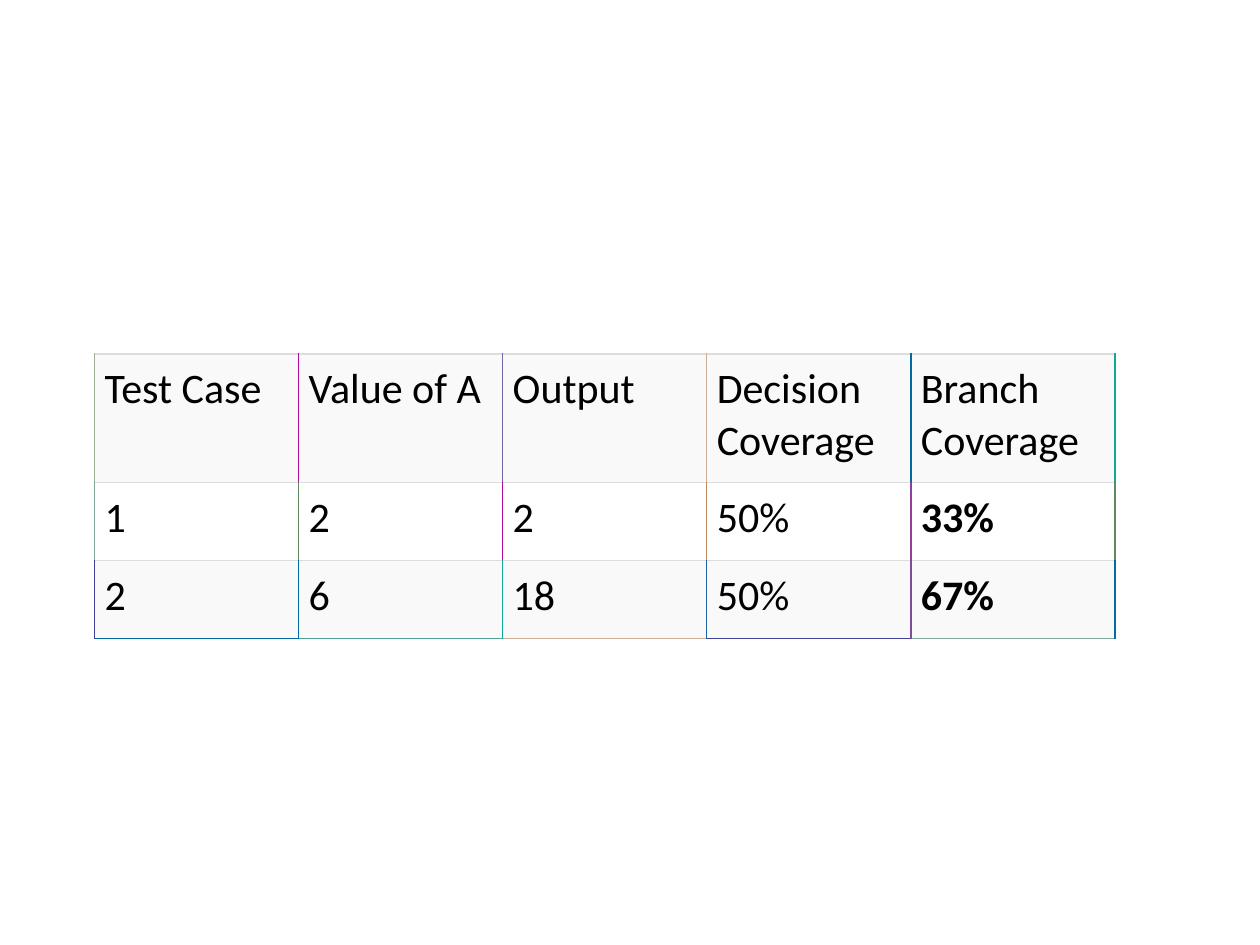
from lxml.etree import SubElement
from pptx import Presentation
from pptx.dml.color import RGBColor
from pptx.oxml.ns import qn
from pptx.util import Inches, Pt

ROWS = [
    ("Test Case", "Value of A", "Output", "Decision Coverage", "Branch Coverage"),
    ("1", "2", "2", "50%", "33%"),
    ("2", "6", "18", "50%", "67%"),
]
ROW_HEIGHTS = (1.02, 0.62, 0.62)
COLUMN_WIDTH = 1.62
LEFT, TOP = 0.75, 2.81
MARGIN = Inches(0.08)

BLACK = RGBColor(0x00, 0x00, 0x00)
WHITE = RGBColor(0xFF, 0xFF, 0xFF)
PALE_GREY = RGBColor(0xF9, 0xF9, 0xF9)
RULE_GREY = RGBColor(0xDD, 0xDD, 0xDD)

# Vertical rules of each row, left edge to right edge
VERTICAL_RULES = [
    [RGBColor.from_string(code) for code in codes.split()]
    for codes in (
        "A0AE94 B009A3 7068A2 D0AE94 0068A2 10AA94",
        "80A894 608960 B009A3 C08860 904099 608960",
        "404299 006DA4 10A994 2061A2 804B99 006DA4",
    )
]
BOTTOM_RULES = [
    RGBColor.from_string(code)
    for code in "0068A2 50A094 D0AE94 404299 80A894".split()
]


def set_borders(cell, borders):
    """Add (side, colour, width) lines ahead of the cell's fill, in schema order."""
    properties = cell._tc.get_or_add_tcPr()
    for position, (side, colour, width) in enumerate(borders):
        line = SubElement(properties, qn(f"a:ln{side}"), w=str(Pt(width)))
        fill = SubElement(line, qn("a:solidFill"))
        SubElement(fill, qn("a:srgbClr"), val=str(colour))
        properties.insert(position, line)


presentation = Presentation()
presentation.slide_width, presentation.slide_height = Inches(10), Inches(7.5)
slide = presentation.slides.add_slide(presentation.slide_layouts[6])

column_count = len(ROWS[0])
coverage = slide.shapes.add_table(
    len(ROWS), column_count, Inches(LEFT), Inches(TOP),
    Inches(COLUMN_WIDTH * column_count), Inches(sum(ROW_HEIGHTS)),
).table
coverage.first_row = coverage.horz_banding = False
for column in coverage.columns:
    column.width = Inches(COLUMN_WIDTH)

last_row, last_column = len(ROWS) - 1, column_count - 1
for r, values in enumerate(ROWS):
    coverage.rows[r].height = Inches(ROW_HEIGHTS[r])
    rules = VERTICAL_RULES[r]
    for c, value in enumerate(values):
        cell = coverage.cell(r, c)
        cell.margin_left = cell.margin_right = MARGIN
        cell.margin_top = cell.margin_bottom = MARGIN
        cell.fill.solid()
        cell.fill.fore_color.rgb = WHITE if r % 2 else PALE_GREY
        bottom = (BOTTOM_RULES[c], 1) if r == last_row else (RULE_GREY, 0.75)
        set_borders(cell, [
            ("L", rules[c], 1),
            ("R", rules[c + 1], 1),
            ("T", RULE_GREY, 0.75),
            ("B", *bottom),
        ])
        run = cell.text_frame.paragraphs[0].add_run()
        run.text = value
        run.font.name = "Calibri"
        run.font.size = Pt(24)
        run.font.color.rgb = BLACK
        run.font.bold = r > 0 and c == last_column

presentation.save("out.pptx")
